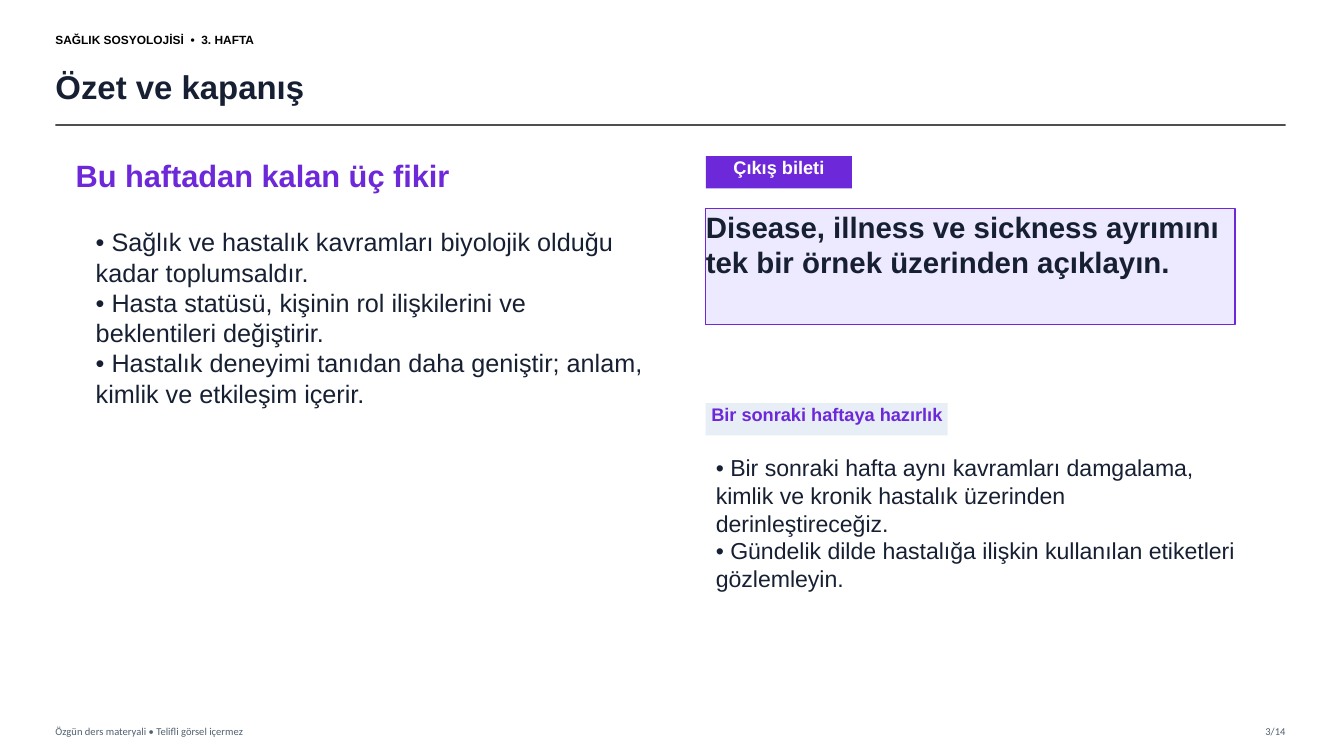
"""Build the summary and closing slide of a weekly lecture."""
from lxml.etree import SubElement
from pptx import Presentation
from pptx.dml.color import RGBColor as Rgb
from pptx.enum.shapes import MSO_CONNECTOR as Conn, MSO_SHAPE as Kind
from pptx.enum.text import MSO_ANCHOR as Anchor, PP_ALIGN as Align
from pptx.oxml.ns import qn
from pptx.util import Inches, Pt

INK = {
    "black": "000000",
    "dark": "172033",
    "rule": "333333",
    "gray": "506070",
    "violet": "6D28D9",
    "lilac": "EDE9FE",
    "mist": "E8EEF5",
    "white": "FFFFFF",
}
LEFT, RIGHT = 0.55, 12.75
SIDE = 7


class Deck:
    def __init__(self):
        self.show = Presentation()
        self.show.slide_width = Inches(13.33)
        self.show.slide_height = Inches(7.5)
        self.slide = self.show.slides.add_slide(self.show.slide_layouts[6])

    def ink(self, name):
        return Rgb.from_string(INK[name])

    def label(self, shape, lines, size, color, bold=False, font="Arial",
              align=Align.LEFT, anchor=Anchor.TOP):
        frame = shape.text_frame
        frame.word_wrap = True
        frame.vertical_anchor = anchor
        frame.margin_left = frame.margin_right = 0
        frame.margin_top = frame.margin_bottom = 0
        frame.text = "\n".join(lines)
        for para in frame.paragraphs:
            para.alignment = align
            para.font.name = font
            para.font.size = Pt(size)
            para.font.bold = bold
            para.font.color.rgb = self.ink(color)

    def text(self, box, lines, size, color, **style):
        shape = self.slide.shapes.add_textbox(*map(Inches, box))
        self.label(shape, lines, size, color, **style)

    def panel(self, box, fill, lines, size, color, edge=None, **style):
        shape = self.slide.shapes.add_shape(Kind.RECTANGLE, *map(Inches, box))
        shape.shadow.inherit = False
        shape.fill.solid()
        shape.fill.fore_color.rgb = self.ink(fill)
        if edge:
            shape.line.color.rgb = self.ink(edge)
            shape.line.width = Pt(1)
        else:
            shape.line.fill.background()
        self.label(shape, lines, size, color, bold=True, **style)

    def tag(self, top, width, fill, words, color):
        self.panel((SIDE, top, width, 0.32), fill, [words], 13, color,
                   align=Align.CENTER)

    def rule(self, top, color, width, alpha):
        line = self.slide.shapes.add_connector(
            Conn.STRAIGHT, *map(Inches, (LEFT, top, RIGHT, top)))
        line.line.color.rgb = self.ink(color)
        line.line.width = Pt(width)
        props = line._element.spPr
        tint = props.find(".//" + qn("a:srgbClr"))
        SubElement(tint, qn("a:alpha")).set("val", str(alpha * 1000))
        SubElement(props, qn("a:effectLst"))

    def foot(self, left, width, words, align):
        self.text((left, 7.14, width, 0.22), [words], 7.5, "gray",
                  font="Calibri", align=align, anchor=Anchor.MIDDLE)


def main():
    deck = Deck()
    deck.text((LEFT, 0.25, 3.6, 0.28), ["SAĞLIK SOSYOLOJİSİ  •  3. HAFTA"],
              8.5, "black", bold=True, anchor=Anchor.MIDDLE)
    deck.text((LEFT, 0.58, 11.95, 0.55), ["Özet ve kapanış"],
              23.5, "dark", bold=True, anchor=Anchor.MIDDLE)
    deck.rule(1.24, "rule", 1.2, 85)
    deck.foot(LEFT, 6, "Özgün ders materyali • Telifli görsel içermez", Align.LEFT)
    deck.foot(RIGHT - 0.65, 0.65, "3/14", Align.RIGHT)

    deck.text((0.75, 1.55, 5.4, 0.45), ["Bu haftadan kalan üç fikir"],
              22, "violet", bold=True)
    deck.text((0.95, 2.25, 5.5, 2.4), [
        "• Sağlık ve hastalık kavramları biyolojik olduğu kadar toplumsaldır.",
        "• Hasta statüsü, kişinin rol ilişkilerini ve beklentileri değiştirir.",
        "• Hastalık deneyimi tanıdan daha geniştir; anlam, kimlik ve etkileşim içerir.",
    ], 18, "dark")

    deck.tag(1.55, 1.45, "violet", "Çıkış bileti", "white")
    deck.panel((SIDE, 2.07, 5.25, 1.15), "lilac", [
        "Disease, illness ve sickness ayrımını tek bir örnek üzerinden açıklayın.",
    ], 21, "dark", edge="violet")
    deck.tag(4, 2.4, "mist", "Bir sonraki haftaya hazırlık", "violet")
    deck.text((SIDE + 0.1, 4.5, 5.2, 1.35), [
        "• Bir sonraki hafta aynı kavramları damgalama, kimlik ve kronik hastalık "
        "üzerinden derinleştireceğiz.",
        "• Gündelik dilde hastalığa ilişkin kullanılan etiketleri gözlemleyin.",
    ], 16.5, "dark")
    deck.show.save("out.pptx")


if __name__ == "__main__":
    main()
